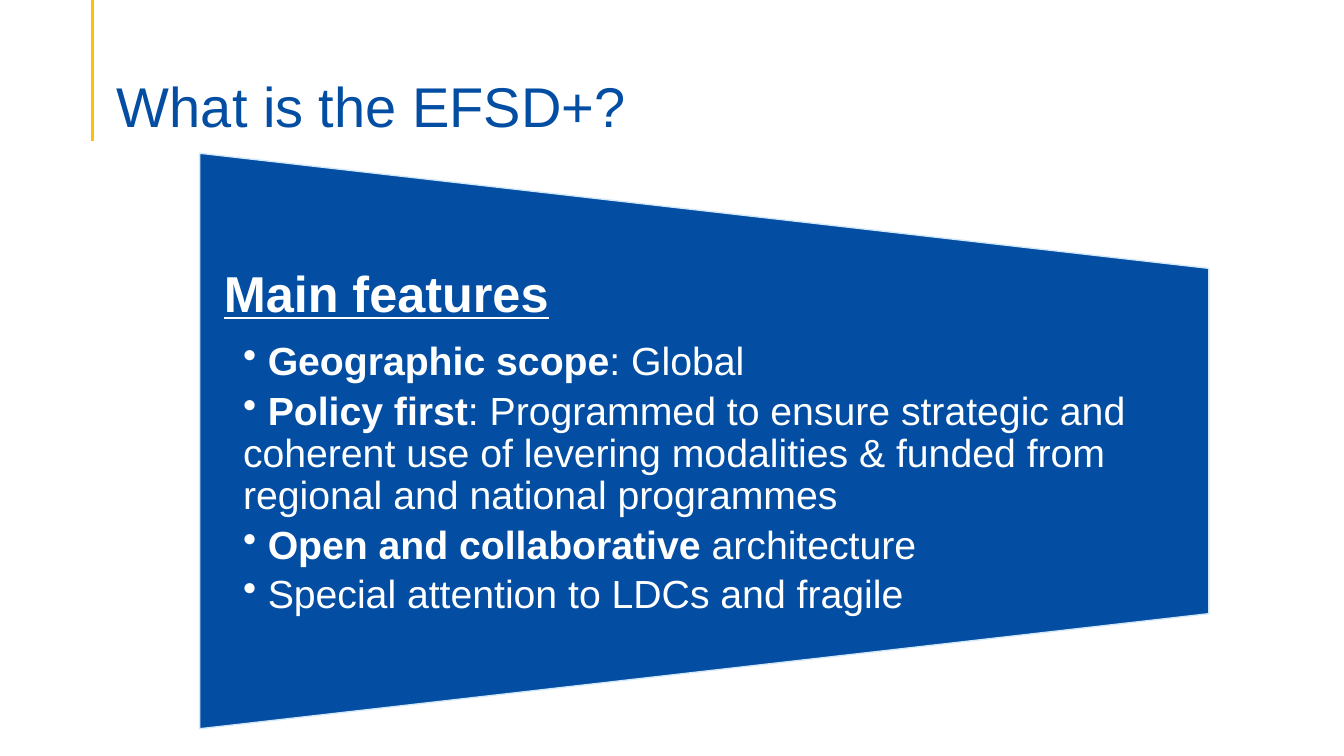
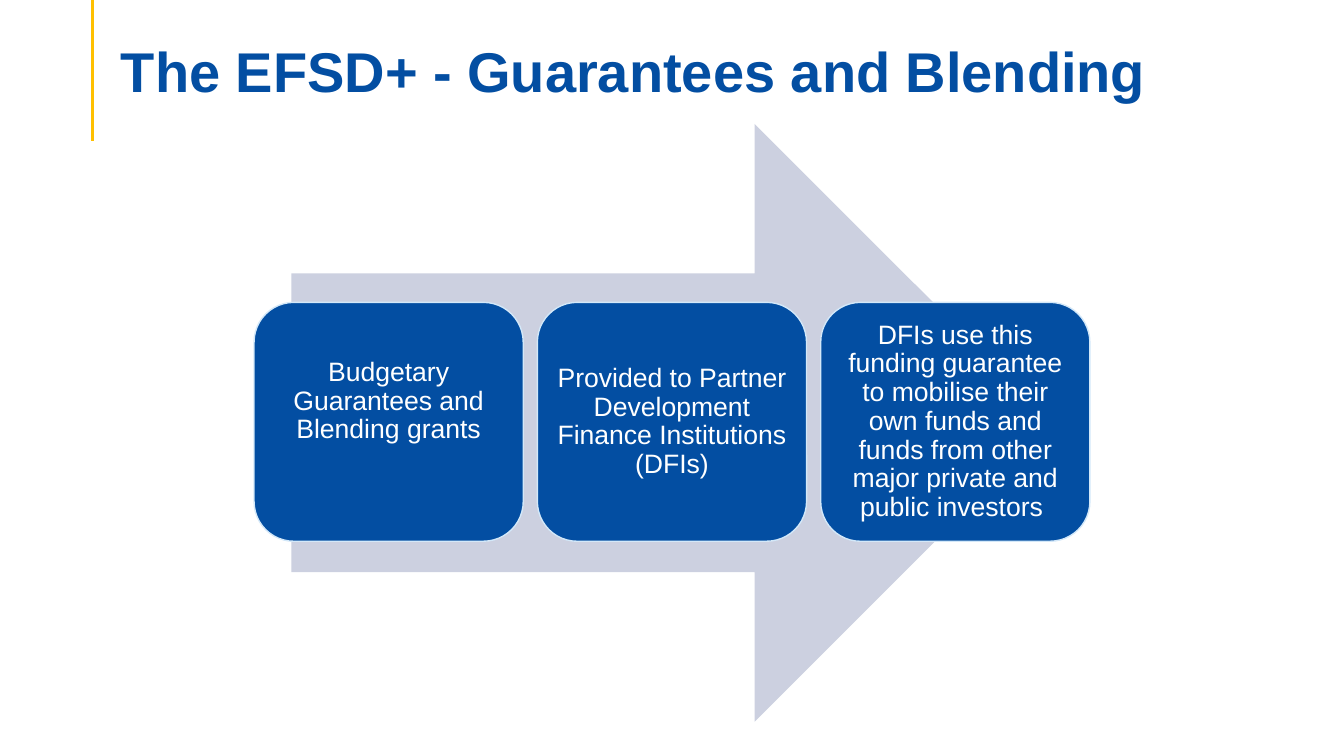
from dataclasses import dataclass

import pptx
import pptx.dml.color
import pptx.enum.shapes
import pptx.enum.text
import pptx.oxml.ns
import pptx.util
from lxml import etree

Inches = pptx.util.Inches
Pt = pptx.util.Pt
SHAPES = pptx.enum.shapes.MSO_SHAPE
ALIGN = pptx.enum.text.PP_ALIGN
ANCHOR = pptx.enum.text.MSO_ANCHOR


@dataclass(frozen=True)
class Theme:
    font: str = "Arial"
    blue: str = "034EA2"
    yellow: str = "FFC000"
    outline: str = "D3E8F9"
    arrow: str = "CCD0E0"
    white: str = "FFFFFF"
    title_size: int = 40
    heading_size: int = 36
    bullet_size: int = 28
    step_size: int = 19
    line_spacing: float = 0.9


THEME = Theme()

FEATURES = [
    [(" ", False), ("Geographic scope", True), (": Global", False)],
    [
        (" ", False),
        ("Policy first", True),
        (": Programmed to ensure strategic and coherent use of levering modalities "
         "& funded from regional and national programmes", False),
    ],
    [(" ", False), ("Open and collaborative ", True), ("architecture", False)],
    [(" Special attention to LDCs and fragile", False)],
]

# Each step: text and how far it is lifted above the middle of its box, in inches
STEPS = [
    ("Budgetary Guarantees and Blending grants", 0.2),
    ("Provided to Partner Development Finance Institutions (DFIs)", 0),
    ("DFIs use this funding guarantee to mobilise their own funds and funds "
     "from other major private and public investors ", 0),
]


def rgb(color):
    return pptx.dml.color.RGBColor.from_string(color)


def write_text(paragraph, text, *, size, color=THEME.white, bold=False,
               underline=False, align=ALIGN.LEFT, space_after=0):
    """Append a run to the paragraph and set the paragraph's layout."""
    paragraph.alignment = align
    paragraph.line_spacing = THEME.line_spacing
    paragraph.space_before = Pt(0)
    paragraph.space_after = Pt(space_after)
    run = paragraph.add_run()
    run.text = text
    run.font.name = THEME.font
    run.font.size = Pt(size)
    run.font.bold = bold
    run.font.underline = underline
    run.font.color.rgb = rgb(color)


def set_frame(frame, anchor, left, top, right, bottom):
    frame.word_wrap = True
    frame.auto_size = pptx.enum.text.MSO_AUTO_SIZE.NONE
    frame.vertical_anchor = anchor
    frame.margin_left, frame.margin_top = Inches(left), Inches(top)
    frame.margin_right, frame.margin_bottom = Inches(right), Inches(bottom)


def set_bullet(paragraph, indent):
    properties = paragraph._p.get_or_add_pPr()
    properties.set("marL", str(Inches(indent)))
    properties.set("indent", "0")
    bullet = etree.SubElement(properties, pptx.oxml.ns.qn("a:buChar"))
    bullet.set("char", "•")


def add_shape(slide, kind, left, top, width, height, fill, outline=None):
    shape = slide.shapes.add_shape(
        kind, Inches(left), Inches(top), Inches(width), Inches(height))
    shape.shadow.inherit = False
    shape.fill.solid()
    shape.fill.fore_color.rgb = rgb(fill)
    if outline:
        shape.line.color.rgb = rgb(outline)
        shape.line.width = Pt(1)
    else:
        shape.line.fill.background()
    return shape


def add_accent_line(slide):
    line = slide.shapes.add_connector(
        pptx.enum.shapes.MSO_CONNECTOR.STRAIGHT,
        Inches(0.92), Inches(0), Inches(0.92), Inches(1.4))
    line.line.color.rgb = rgb(THEME.yellow)
    line.line.width = Pt(2.25)
    etree.SubElement(line._element.spPr, pptx.oxml.ns.qn("a:effectLst"))


def add_titled_slide(presentation, text, left, top, bold=False):
    slide = presentation.slides.add_slide(presentation.slide_layouts[5])
    add_accent_line(slide)
    title = slide.shapes.title
    title.left, title.top = Inches(left), Inches(top)
    title.width, title.height = Inches(11.5), Inches(0.86)
    set_frame(title.text_frame, ANCHOR.BOTTOM, 0.1, 0.05, 0.1, 0)
    write_text(title.text_frame.paragraphs[0], text, size=THEME.title_size,
               color=THEME.blue, bold=bold)
    return slide


def add_features(slide):
    width, height = 5.71, 10.01
    panel = add_shape(slide, SHAPES.FLOWCHART_MANUAL_OPERATION, 4.13, -0.63,
                      width, height, THEME.blue, THEME.outline)
    panel.rotation = 270

    box = slide.shapes.add_textbox(Inches(1.97), Inches(2.67), Inches(height), Inches(3.42))
    frame = box.text_frame
    set_frame(frame, ANCHOR.TOP, 0.25, 0, 0.25, 0)
    write_text(frame.paragraphs[0], "Main features", size=THEME.heading_size,
               bold=True, underline=True, space_after=13)
    for feature in FEATURES:
        paragraph = frame.add_paragraph()
        set_bullet(paragraph, 0.19)
        for text, bold in feature:
            write_text(paragraph, text, size=THEME.bullet_size, bold=bold, space_after=5)


def add_steps(slide):
    add_shape(slide, SHAPES.RIGHT_ARROW, 2.89, 1.23, 7.56, 5.93, THEME.arrow)
    left, width, gap, margin = 2.52, 2.67, 0.14, 0.08
    for index, (text, lift) in enumerate(STEPS):
        step = add_shape(slide, SHAPES.ROUNDED_RECTANGLE, left + index * (width + gap), 3,
                         width, 2.37, THEME.blue, THEME.outline)
        set_frame(step.text_frame, ANCHOR.MIDDLE, margin, margin, margin, margin + 2 * lift)
        write_text(step.text_frame.paragraphs[0], text, size=THEME.step_size,
                   align=ALIGN.CENTER)


def main():
    presentation = pptx.Presentation()
    presentation.slide_width = Inches(13.33)
    presentation.slide_height = Inches(7.5)
    add_features(add_titled_slide(presentation, "What is the EFSD+?", 1.06, 0.53))
    add_steps(add_titled_slide(
        presentation, "The EFSD+ - Guarantees and Blending", 1.1, 0.18, bold=True))
    presentation.save("out.pptx")


if __name__ == "__main__":
    main()
